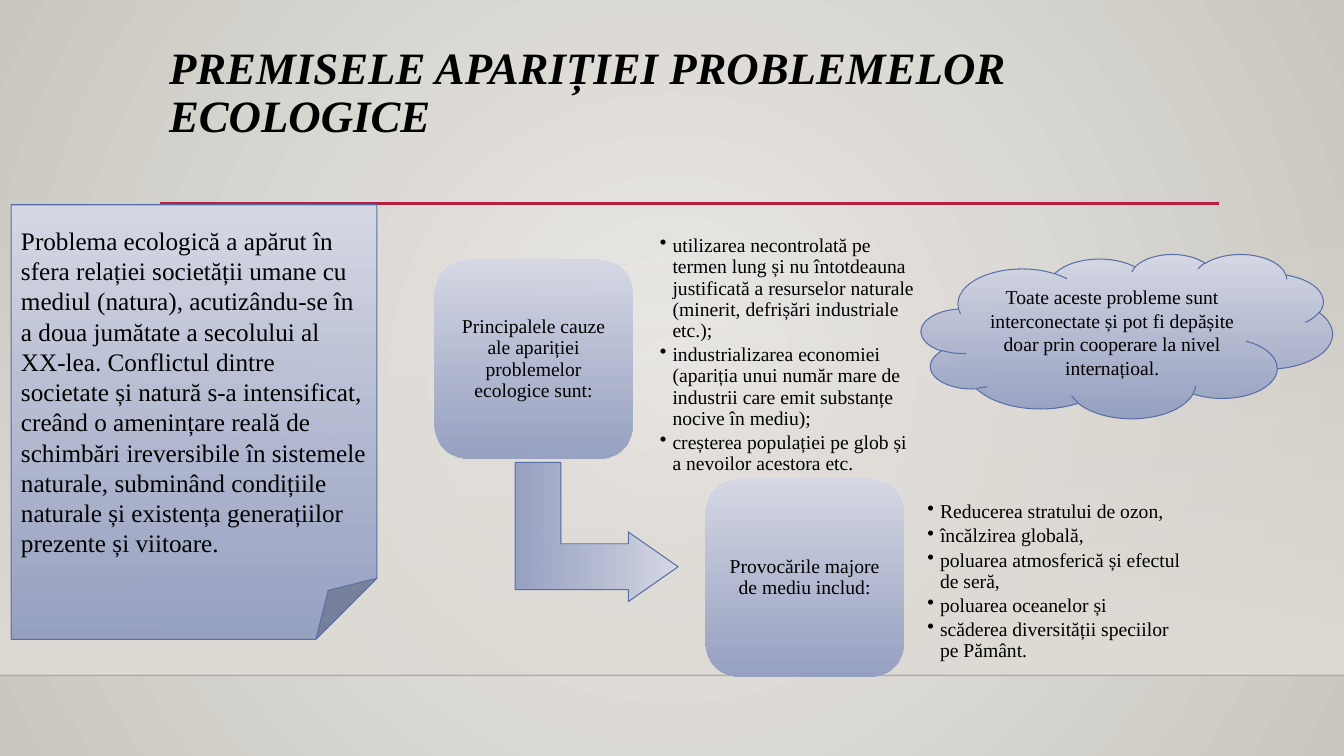
from lxml.etree import SubElement
from pptx import Presentation
from pptx.dml.color import RGBColor
from pptx.enum.shapes import MSO_CONNECTOR, MSO_SHAPE as Preset
from pptx.enum.text import MSO_ANCHOR as Anchor, PP_ALIGN as Align
from pptx.oxml.ns import qn
from pptx.util import Cm, Pt

BLACK = RGBColor(0x00, 0x00, 0x00)
RED = RGBColor(0xB7, 0x1E, 0x42)
BACK_LIGHT = RGBColor(0xEC, 0xEA, 0xE7)
BACK_DARK = RGBColor(0xCA, 0xC7, 0xC1)
FLOOR = RGBColor(0xDF, 0xDB, 0xD5)
BLUE_LIGHT = RGBColor(0xD6, 0xD9, 0xE5)
BLUE_DARK = RGBColor(0x92, 0x9D, 0xC0)
OUTLINE = RGBColor(0x58, 0x6E, 0xA6)


def add_panel(preset, left, top, width, height, colors=(BLUE_LIGHT, BLUE_DARK),
              alphas=(100, 92), outlined=True):
    """Add a shape with a vertical two-colour gradient."""
    shape = slide.shapes.add_shape(preset, Cm(left), Cm(top), Cm(width), Cm(height))
    shape.shadow.inherit = False
    shape.fill.gradient()
    shape.fill.gradient_angle = 270
    for stop, color in zip(shape.fill.gradient_stops, colors):
        stop.color.rgb = color
    for color_element, alpha in zip(shape._element.xpath(".//a:gs/a:srgbClr"), alphas):
        SubElement(color_element, qn("a:alpha"), val=str(alpha * 1000))
    if outlined:
        shape.line.color.rgb = OUTLINE
        shape.line.width = Pt(0.75)
    else:
        shape.line.fill.background()
    return shape


def write_text(shape, text, size, align=Align.LEFT, anchor=Anchor.MIDDLE,
               line_spacing=1.0, inset=None, bulleted=False):
    """Fill a shape with text, one paragraph per line."""
    frame = shape.text_frame
    frame.word_wrap = True
    frame.vertical_anchor = anchor
    if inset is not None:
        frame.margin_left = frame.margin_right = Cm(inset)
        frame.margin_top = frame.margin_bottom = Cm(inset)
    frame.text = text
    for paragraph in frame.paragraphs:
        paragraph.alignment = align
        paragraph.line_spacing = line_spacing
        if bulleted:
            paragraph.space_after = Pt(2.1)
            properties = paragraph._p.get_or_add_pPr()
            properties.set("marL", str(Cm(0.32)))
            properties.set("indent", str(-Cm(0.32)))
            SubElement(properties, qn("a:buChar"), char="•")
        for run in paragraph.runs:
            run.font.name = "Times New Roman"
            run.font.size = Pt(size)
            run.font.color.rgb = BLACK


presentation = Presentation()
presentation.slide_width = Cm(33.87)
presentation.slide_height = Cm(19.05)
slide = presentation.slides.add_slide(presentation.slide_layouts[6])

# Radial background
background = slide.background.fill
background.gradient()
for stop, color in zip(background.gradient_stops, (BACK_LIGHT, BACK_DARK)):
    stop.color.rgb = color
linear = slide._element.xpath(".//p:bg//a:lin")[0]
gradient = linear.getparent()
gradient.remove(linear)
circle = SubElement(gradient, qn("a:path"), path="circle")
SubElement(circle, qn("a:fillToRect"), l="50000", t="50000", r="50000", b="50000")

# Floor band, its edge and the title rule
add_panel(Preset.RECTANGLE, 0, 5.61, 33.87, 11.41, (FLOOR, FLOOR), (0, 100), outlined=False)
for left, right, y, color, width, alpha in (
    (0, 33.87, 17.02, BLACK, 1, 20),
    (4.04, 30.73, 5.13, RED, 2.5, 100),
):
    rule = slide.shapes.add_connector(MSO_CONNECTOR.STRAIGHT, Cm(left), Cm(y), Cm(right), Cm(y))
    rule.line.color.rgb = color
    rule.line.width = Pt(width)
    color_element = rule._element.xpath(".//a:ln//a:srgbClr")[0]
    SubElement(color_element, qn("a:alpha"), val=str(alpha * 1000))
    SubElement(rule._element.spPr, qn("a:effectLst"))

# Title
title = slide.shapes.add_textbox(Cm(4.01), Cm(1.02), Cm(26.67), Cm(2.92))
write_text(title, "PREMISELE APARIȚIEI PROBLEMELOR ECOLOGICE", 32,
           anchor=Anchor.TOP, line_spacing=0.9)
title_font = title.text_frame.paragraphs[0].runs[0].font
title_font.bold = True
title_font.italic = True

# Arrow from causes to challenges
arrow = add_panel(Preset.BENT_UP_ARROW, 13.28, 11.35, 3.51, 4.11)
arrow.rotation = 90
for index, value in enumerate((0.328, 0.25, 0.358)):
    arrow.adjustments[index] = value

# Steps: rounded block with its bullet list
steps = (
    ((10.95, 6.55), "Principalele cauze ale apariției problemelor ecologice sunt:",
     (16.48, 6.3), (
         "utilizarea necontrolată pe termen lung și nu întotdeauna justificată a resurselor "
         "naturale (minerit, defrișări industriale etc.);",
         "industrializarea economiei (apariția unui număr mare de industrii care emit "
         "substanțe nocive în mediu);",
         "creșterea populației pe glob și a nevoilor acestora etc.")),
    ((17.78, 12.06), "Provocările majore de mediu includ:",
     (23.22, 12.01), (
         "Reducerea stratului de ozon,",
         "încălzirea globală,",
         "poluarea atmosferică și efectul de seră,",
         "poluarea oceanelor și",
         "scăderea diversității speciilor pe Pământ.")),
)
for (block_left, block_top), heading, (list_left, list_top), items in steps:
    block = add_panel(Preset.ROUNDED_RECTANGLE, block_left, block_top, 5, 5, outlined=False)
    write_text(block, heading, 14, Align.CENTER, line_spacing=0.9, inset=0.15)
    bullets = slide.shapes.add_textbox(Cm(list_left), Cm(list_top), Cm(6.83), Cm(5.31))
    write_text(bullets, "\n".join(items), 14, line_spacing=0.9, inset=0.15, bulleted=True)

# Conclusion cloud
cloud = add_panel(Preset.CLOUD, 23.22, 6.4, 10.36, 4.14)
write_text(cloud, "Toate aceste probleme sunt interconectate și pot fi depășite doar prin "
           "cooperare la nivel internațioal.", 14, Align.CENTER)

# Introductory note
note = add_panel(Preset.FOLDED_CORNER, 0.28, 5.16, 9.22, 10.95)
write_text(note, "Problema ecologică a apărut în sfera relației societății umane cu mediul "
           "(natura), acutizându-se în a doua jumătate a secolului al XX-lea. Conflictul dintre "
           "societate și natură s-a intensificat, creând o amenințare reală de schimbări "
           "ireversibile în sistemele naturale, subminând condițiile naturale și existența "
           "generațiilor prezente și viitoare.", 18)

presentation.save("out.pptx")
